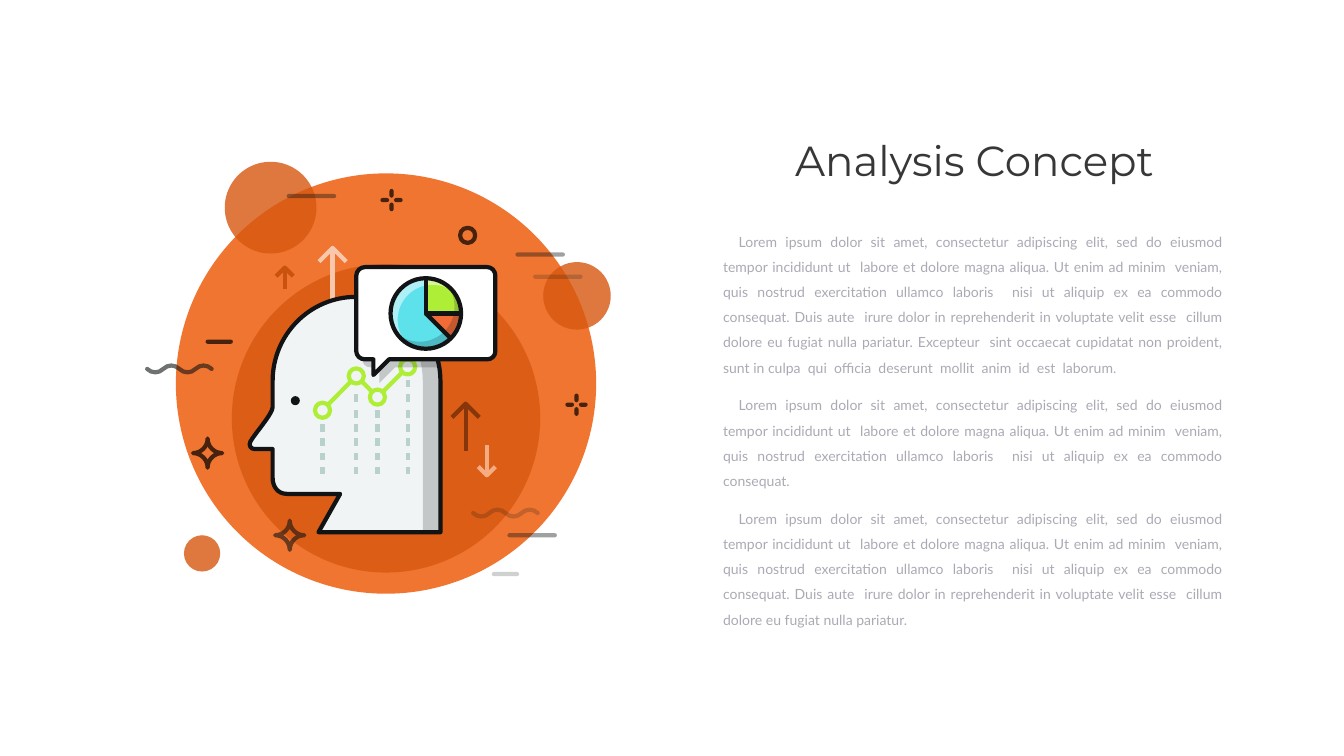
from dataclasses import dataclass
from math import cos, hypot, radians, sin, tan

from lxml import etree
from pptx import Presentation
from pptx.dml import color
from pptx.enum import shapes, text
from pptx.oxml import ns
from pptx.util import Inches, Pt

INK, SHADE, BLACK, ORANGE, LIME, DASH = "111315", "111415", "000000", "D75710", "AFEE37", "B8D1CD"


@dataclass
class Stroke:
    colour: str
    alpha: int = 100
    rounded: bool = False


@dataclass
class Arrow:
    tip: tuple
    tail_y: float
    half: float
    colour: str


def paint(fill, colour: str, alpha: int = 100) -> None:
    fill.solid()
    fill.fore_color.rgb = color.RGBColor.from_string(colour)
    if alpha < 100:
        srgb = fill._xPr.find(".//" + ns.qn("a:srgbClr"))
        etree.SubElement(srgb, ns.qn("a:alpha"), val=str(alpha * 1000))


def draw_stroke(shape, stroke: Stroke) -> None:
    shape.line.width = Pt(6)
    paint(shape.line.fill, stroke.colour, stroke.alpha)
    ln = shape._element.spPr.find(ns.qn("a:ln"))
    if stroke.rounded:
        ln.set("cap", "rnd")
    etree.SubElement(ln, ns.qn("a:round"))


def style(shape, fill=None, alpha=100, stroke=None) -> None:
    shape.shadow.inherit = False
    if fill:
        paint(shape.fill, fill, alpha)
    else:
        shape.fill.background()
    if stroke:
        draw_stroke(shape, stroke)
    else:
        shape.line.fill.background()


def outline(canvas, path: list, closed: bool = True, **look) -> None:
    """Pairs are corners; six numbers are a Bezier curve from the last point."""
    points = [(Inches(part[i]), Inches(part[i + 1])) for part in path for i in range(0, len(part), 2)]
    builder = canvas.build_freeform(*points[0])
    builder.add_line_segments(points[1:], close=closed)
    shape = builder.convert_to_shape()
    segments = iter(shape._element.findall(".//" + ns.qn("a:lnTo")))
    for part in path[1:]:
        segment = next(segments)
        if len(part) == 6:
            segment.tag = ns.qn("a:cubicBezTo")
            for _ in range(2):
                extra = next(segments)
                segment.append(extra[0])
                extra.getparent().remove(extra)
    style(shape, **look)


def circle(canvas, x: float, y: float, r: float, **look) -> None:
    style(canvas.add_shape(shapes.MSO_SHAPE.OVAL, Inches(x - r), Inches(y - r),
                           Inches(2 * r), Inches(2 * r)), **look)


def line(canvas, start: tuple, end: tuple, stroke: Stroke) -> None:
    connector = canvas.add_connector(shapes.MSO_CONNECTOR.STRAIGHT,
                                     *(Inches(v) for v in (*start, *end)))
    draw_stroke(connector, stroke)
    etree.SubElement(connector._element.spPr, ns.qn("a:effectLst"))


def draw_arrow(canvas, arrow: Arrow) -> None:
    (x, y), half, stroke = arrow.tip, arrow.half, Stroke(arrow.colour)
    barb_y = y + half if arrow.tail_y > y else y - half
    outline(canvas, [(x - half, barb_y), (x, y), (x + half, barb_y)], closed=False, stroke=stroke)
    line(canvas, (x, arrow.tail_y), (x, y), stroke)


def pie_slice(canvas, x: float, y: float, r: float, start: int, end: int, fill: str) -> None:
    k = 4 / 3 * tan(radians(45 / 4))
    path = [(x, y), (x + r * cos(radians(start)), y + r * sin(radians(start)))]
    for angle in range(start, end, 45):
        (c1, s1), (c2, s2) = ((cos(radians(a)), sin(radians(a))) for a in (angle, angle + 45))
        path.append((x + r * (c1 - k * s1), y + r * (s1 + k * c1),
                     x + r * (c2 + k * s2), y + r * (s2 - k * c2), x + r * c2, y + r * s2))
    outline(canvas, path, fill=fill)


def wave(canvas, x: float, y: float, stroke: Stroke) -> None:
    path = [(x, y)]
    for i in range(4):
        left, bend = x + 0.32 * i, y + 0.09 * (-1) ** i
        path.append((left + 0.09, bend, left + 0.23, bend, left + 0.32, y))
    outline(canvas, path, closed=False, stroke=stroke)


def sparkle(canvas, x: float, y: float, stroke: Stroke) -> None:
    r, c = 0.29, 0.13
    outline(canvas, [(x, y + r), (x, y + c, x - c, y, x - r, y), (x - c, y, x, y - c, x, y - r),
                     (x, y - c, x + c, y, x + r, y), (x + c, y, x, y + c, x, y + r)], stroke=stroke)


def cross(canvas, x: float, y: float, stroke: Stroke) -> None:
    for dx, dy in ((0, -1), (-1, 0), (0, 1), (1, 0)):
        line(canvas, (x + 0.09 * dx, y + 0.09 * dy), (x + 0.18 * dx, y + 0.18 * dy), stroke)


def text_box(canvas, box: tuple, paragraphs: list, size: int, font: str, colour: str, align) -> tuple:
    frame = canvas.add_textbox(*(Inches(v) for v in box)).text_frame
    frame.word_wrap = True
    frame.text = "\n".join(paragraphs)
    for paragraph in frame.paragraphs:
        paragraph.alignment = align
        paragraph.font.size, paragraph.font.name = Pt(size), font
        paint(paragraph.font.fill, colour)
    return frame.paragraphs


prs = Presentation()
prs.slide_width, prs.slide_height = Inches(26.67), Inches(15)
scene = prs.slides.add_slide(prs.slide_layouts[6]).shapes

# Backdrop circles
circle(scene, 7.66, 7.61, 4.17, fill="F07530")
for x, y, r in ((7.66, 8.3, 3.06), (5.37, 4.12, 0.91), (11.45, 5.87, 0.67), (4.01, 10.98, 0.36)):
    circle(scene, x, y, r, fill=ORANGE, alpha=80)

# Title and body
text_box(scene, (14.2, 2.62, 10.27, 1.11), ["Analysis Concept"], 60, "Montserrat", "373737",
         text.PP_ALIGN.CENTER)
opening = ("Lorem ipsum dolor sit amet, consectetur adipiscing elit, sed do eiusmod tempor incididunt "
           "ut  labore et dolore magna aliqua. Ut enim ad minim  veniam, quis nostrud exercitation "
           "ullamco laboris  nisi ut aliquip ex ea commodo consequat.")
middle = (" Duis aute  irure dolor in reprehenderit in voluptate velit esse  cillum dolore eu fugiat "
          "nulla pariatur.")
closing = (" Excepteur  sint occaecat cupidatat non proident, sunt in culpa  qui  officia  deserunt  "
           "mollit  anim  id  est  laborum.")
body = text_box(scene, (14.25, 4.41, 10.11, 7.67), [opening + middle + closing, opening, opening + middle],
                20, "Lato", "AAAAB5", text.PP_ALIGN.JUSTIFY)
for paragraph in body:
    paragraph.line_spacing, paragraph.space_before = 1.5, Pt(18)
    paragraph._p.get_or_add_pPr().set("indent", str(Inches(0.31)))

# Arrows around the head
for arrow in (Arrow((6.6, 4.92), 6.29, 0.27, "F9C8AC"), Arrow((9.24, 8.01), 8.94, 0.27, "86360A"),
              Arrow((9.66, 9.43), 8.83, 0.17, "F6AC83"), Arrow((5.65, 5.31), 5.74, 0.17, "C9520F")):
    draw_arrow(scene, arrow)

# Head in profile
profile = [(7.07, 5.89), (6.15, 5.89, 5.41, 6.64, 5.41, 7.56), (5.41, 8.08),
           (5.41, 8.21, 5.06, 8.6, 4.97, 8.76), (4.93, 8.83, 4.97, 8.91, 5.05, 8.91), (5.41, 8.91),
           (5.41, 9.48), (5.41, 9.63, 5.49, 9.8, 5.7, 9.8), (6.75, 9.8), (6.32, 10.56),
           (8.74, 10.56), (8.74, 7.56), (8.74, 6.64, 7.99, 5.89, 7.07, 5.89)]
nape = [(7.07, 5.89), (7.01, 5.89, 6.95, 5.9, 6.9, 5.9), (7.73, 5.99, 8.39, 6.7, 8.39, 7.56),
        (8.39, 10.56), *profile[-3:]]
outline(scene, profile, fill="F1F4F4")
outline(scene, nape, fill=SHADE, alpha=20)
outline(scene, profile, stroke=Stroke(INK))
circle(scene, 5.86, 7.95, 0.09, fill=INK)

# Trend line with dashed drops
nodes = [(6.4, 8.14), (7.07, 7.46), (7.49, 7.88), (8.09, 7.28)]
radius = 0.15
for x, y in nodes:
    circle(scene, x, y, radius, stroke=Stroke(LIME))
for (x1, y1), (x2, y2) in zip(nodes, nodes[1:]):
    gap = radius / hypot(x2 - x1, y2 - y1)
    dx, dy = gap * (x2 - x1), gap * (y2 - y1)
    line(scene, (x1 + dx, y1 + dy), (x2 - dx, y2 - dy), Stroke(LIME))
for x, y in nodes:
    for top in (7.53, 7.82, 8.14, 8.42, 8.7, 8.98, 9.26):
        if top > y + radius:
            line(scene, (x, top), (x, top + 0.15), Stroke(DASH))

# Speech bubble and its shadow
outline(scene, [(7.19, 5.9), (7.19, 7.13), (7.19, 7.22, 7.26, 7.29, 7.36, 7.29), (7.53, 7.29),
                (7.53, 7.6), (7.84, 7.29), (8.72, 7.29), (8.6, 6.54, 7.97, 5.95, 7.19, 5.9)],
        fill=SHADE, alpha=20)
outline(scene, [(7.24, 5.3), (9.67, 5.3), (9.76, 5.3, 9.83, 5.38, 9.83, 5.47), (9.83, 6.97),
                (9.83, 7.06, 9.76, 7.13, 9.67, 7.13), (7.72, 7.13), (7.41, 7.44), (7.41, 7.13),
                (7.24, 7.13), (7.15, 7.13, 7.07, 7.06, 7.07, 6.97), (7.07, 5.47),
                (7.07, 5.38, 7.15, 5.3, 7.24, 5.3)], fill="FFFFFF", stroke=Stroke(INK))

# Pie inside the bubble, with a shaded and a lit rim
px, py, pr = 8.45, 6.22, 0.7
for start, end, fill in ((-90, 0, LIME), (45, 270, "5DE2EC"), (0, 45, "F16B36")):
    pie_slice(scene, px, py, pr, start, end, fill)
outline(scene, [(8.88, 5.66), (8.97, 5.78, 9.02, 5.93, 9.02, 6.09), (9.02, 6.47, 8.71, 6.78, 8.33, 6.78),
                (8.17, 6.78, 8.02, 6.73, 7.9, 6.64), (8.03, 6.81, 8.23, 6.91, 8.45, 6.91),
                (8.84, 6.91, 9.15, 6.6, 9.15, 6.22), (9.15, 5.99, 9.04, 5.79, 8.88, 5.66)],
        fill=SHADE, alpha=20)
outline(scene, [(8.03, 6.77), (7.94, 6.65, 7.89, 6.5, 7.89, 6.35), (7.89, 5.96, 8.2, 5.65, 8.58, 5.65),
                (8.74, 5.65, 8.89, 5.7, 9.01, 5.79), (8.88, 5.63, 8.68, 5.52, 8.45, 5.52),
                (8.07, 5.52, 7.76, 5.83, 7.76, 6.22), (7.76, 6.44, 7.86, 6.64, 8.03, 6.77)],
        fill="FFFFFF", alpha=50)
circle(scene, px, py, pr, stroke=Stroke(INK))
outline(scene, [(px, py - pr), (px, py), (px + pr, py)], closed=False, stroke=Stroke(INK))
line(scene, (px, py), (px + 0.5, py + 0.5), Stroke(INK))

# Loose accents
dark = Stroke(BLACK, 70, True)
faint, soft, strong = (Stroke(SHADE, alpha, True) for alpha in (20, 40, 60))
wave(scene, 2.92, 7.32, strong)
wave(scene, 9.39, 10.18, faint)
for x, y, length, stroke in ((10.11, 10.62, 0.9, soft), (10.27, 5.05, 0.9, soft), (5.73, 3.89, 0.9, soft),
                             (9.8, 11.39, 0.46, faint), (4.12, 6.78, 0.46, dark), (10.62, 5.49, 0.9, faint)):
    line(scene, (x, y), (x + length, y), stroke)
sparkle(scene, 5.75, 10.62, strong)
sparkle(scene, 4.12, 8.99, dark)
for x, y in ((11.44, 8.03), (7.77, 3.97)):
    cross(scene, x, y, dark)
circle(scene, 9.28, 4.67, 0.15, stroke=dark)

prs.save("out.pptx")
